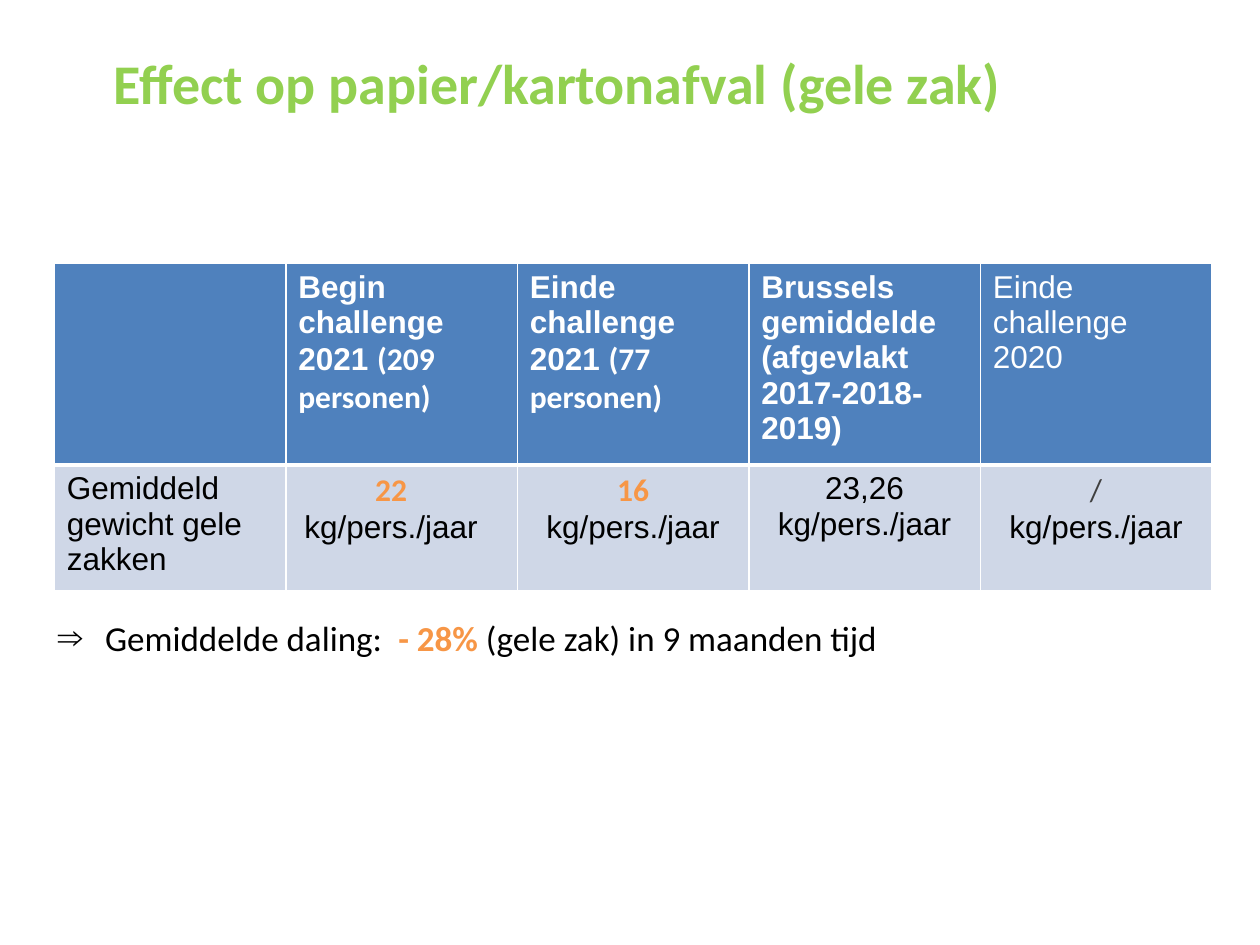
from dataclasses import dataclass
from typing import Any

from lxml.etree import SubElement
from pptx import Presentation
from pptx.dml.color import RGBColor
from pptx.enum.text import PP_ALIGN
from pptx.oxml.ns import qn
from pptx.util import Pt

COLORS = {
    "title": "92D050", "accent": "F79646", "ink": "000000", "muted": "3F3F3F",
    "header": "4F81BD", "body": "CFD7E7", "white": "FFFFFF",
}
HEAVY = {"name": "Calibri", "size": Pt(18), "bold": True}
ARIAL = {"name": "Arial", "size": Pt(18), "bold": False}
ARIAL_BOLD = {**ARIAL, "bold": True}
CALIBRI = {**HEAVY, "bold": False}
LARGE = {**CALIBRI, "size": Pt(20)}
LARGE_BOLD = {**HEAVY, "size": Pt(20)}
TITLE = {**HEAVY, "size": Pt(32)}


@dataclass(frozen=True)
class Span:
    text: str
    color: str
    style: dict[str, Any]


@dataclass(frozen=True)
class Line:
    spans: tuple[Span, ...]
    align: PP_ALIGN = PP_ALIGN.LEFT
    right_margin: float = 0


@dataclass(frozen=True)
class Entry:
    lines: tuple[Line, ...] = ()


def paint(target: Any, color: str) -> None:
    target.rgb = RGBColor.from_string(COLORS[color])


def write_line(paragraph: Any, line: Line) -> None:
    paragraph.alignment = line.align
    if line.right_margin:
        paragraph._p.get_or_add_pPr().set("marR", str(Pt(line.right_margin)))
    for span in line.spans:
        run = paragraph.add_run()
        run.text = span.text
        for attribute, value in span.style.items():
            setattr(run.font, attribute, value)
        paint(run.font.color, span.color)


def write_lines(frame: Any, lines: tuple[Line, ...]) -> None:
    for index, line in enumerate(lines):
        write_line(frame.add_paragraph() if index else frame.paragraphs[0], line)


def add_statement(slide: Any, box: tuple[float, ...], line: Line) -> Any:
    frame = slide.shapes.add_textbox(*map(Pt, box)).text_frame
    layout = {"word_wrap": True, **{f"margin_{side}": Pt(5) for side in ("left", "top", "right", "bottom")}}
    for attribute, value in layout.items():
        setattr(frame, attribute, value)
    write_lines(frame, (line,))
    frame.paragraphs[0].line_spacing = 1.3
    return frame.paragraphs[0]


def add_arrow_bullet(paragraph: Any, indent: float) -> None:
    properties = paragraph._p.get_or_add_pPr()
    properties.set("marL", str(Pt(indent)))
    properties.set("indent", str(-Pt(indent)))
    bullet_color = SubElement(properties, qn("a:buClr"))
    SubElement(bullet_color, qn("a:srgbClr"), val=COLORS["ink"])
    SubElement(properties, qn("a:buFont"), typeface="Arial")
    SubElement(properties, qn("a:buChar"), char="⇒")


def set_borders(cell: Any, widths: dict[str, float]) -> None:
    properties = cell._tc.get_or_add_tcPr()
    for position, (side, width) in enumerate(widths.items()):
        border = properties.makeelement(qn(f"a:ln{side}"), {"w": str(Pt(width))})
        fill = SubElement(border, qn("a:solidFill"))
        SubElement(fill, qn("a:srgbClr"), val=COLORS["white"])
        properties.insert(position, border)


def add_weight_table(slide: Any, rows: tuple[tuple[Entry, ...], ...]) -> None:
    heights = (115, 72)
    table = slide.shapes.add_table(
        len(rows), len(rows[0]), Pt(31), Pt(150.5), Pt(661.5), Pt(sum(heights))
    ).table
    fills = ("header", "body")
    borders = ({"L": 1, "R": 1, "T": 1, "B": 3}, {"L": 1, "R": 1, "T": 3, "B": 1})
    for row_index, entries in enumerate(rows):
        table.rows[row_index].height = Pt(heights[row_index])
        for column_index, entry in enumerate(entries):
            cell = table.cell(row_index, column_index)
            cell.fill.solid()
            paint(cell.fill.fore_color, fills[row_index])
            set_borders(cell, borders[row_index])
            write_lines(cell.text_frame, entry.lines)


def heading(text: str, count: str = "") -> Entry:
    spans = (Span(text, "white", ARIAL_BOLD),)
    if count:
        spans += (Span(count, "white", HEAVY),)
    return Entry((Line(spans),))


def weight(value: str, color: str, style: dict[str, Any], right_margin: float = 0) -> Entry:
    return Entry((
        Line((Span(value, color, style),), PP_ALIGN.CENTER, right_margin),
        Line((Span("kg/pers./jaar", "ink", ARIAL),), PP_ALIGN.CENTER),
    ))


def main() -> None:
    """Build the slide on the effect on paper and cardboard waste."""
    presentation = Presentation()
    presentation.slide_width, presentation.slide_height = Pt(720), Pt(540)
    slide = presentation.slides.add_slide(presentation.slide_layouts[6])

    decrease = add_statement(slide, (28, 340, 674, 176), Line((
        Span("Gemiddelde daling:  ", "ink", LARGE),
        Span("- 28%", "accent", LARGE_BOLD),
        Span(" (gele zak) in 9 maanden tijd", "ink", LARGE),
    )))
    add_arrow_bullet(decrease, 27)

    brussels = Entry(
        heading("Brussels gemiddelde").lines + heading("(afgevlakt 2017-2018-2019)").lines
    )
    add_weight_table(slide, (
        (
            Entry(),
            heading("Begin challenge 2021 ", "(209 personen)"),
            heading("Einde challenge 2021 ", "(77 personen)"),
            brussels,
            Entry((Line((Span("Einde challenge 2020", "white", ARIAL),)),)),
        ),
        (
            Entry((Line((Span("Gemiddeld gewicht gele zakken", "ink", ARIAL),)),)),
            weight("22", "accent", HEAVY, right_margin=12),
            weight("16", "accent", HEAVY),
            weight("23,26", "ink", ARIAL),
            weight("/", "muted", CALIBRI),
        ),
    ))

    add_statement(slide, (60, 11, 652, 53), Line((
        Span("Effect op papier/kartonafval (gele zak)", "title", TITLE),
    )))
    presentation.save("out.pptx")


if __name__ == "__main__":
    main()
